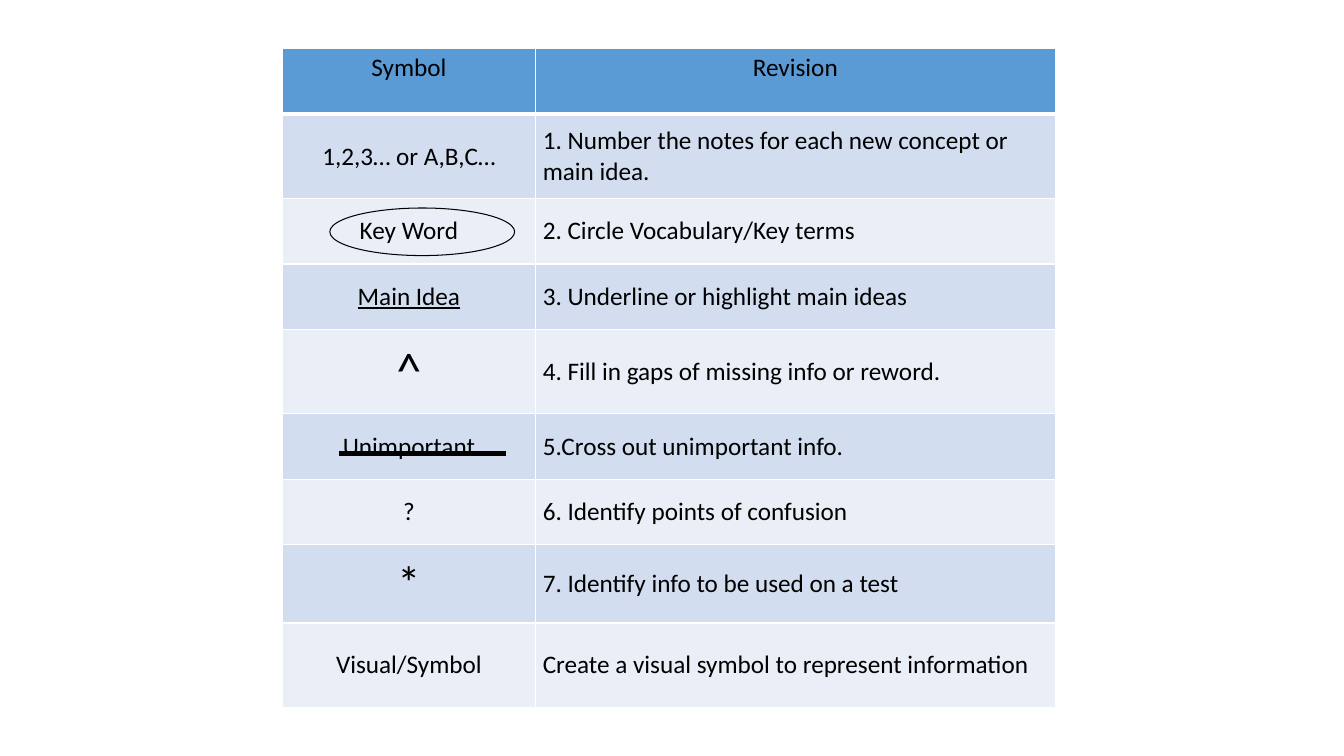
from lxml.etree import SubElement
from pptx import Presentation
from pptx.dml.color import RGBColor
from pptx.enum.shapes import MSO_CONNECTOR, MSO_SHAPE
from pptx.enum.text import MSO_ANCHOR, PP_ALIGN
from pptx.oxml.ns import qn
from pptx.util import Pt

# Content: symbol, revision, row height
HEADER = ("Symbol", "Revision", 46.8)
ROWS = [
    ("1,2,3… or A,B,C…", "1. Number the notes for each new concept or main idea.", 60.2),
    ("Key Word", "2. Circle Vocabulary/Key terms", 46.8),
    ("Main Idea", "3. Underline or highlight main ideas", 46.8),
    ("^", "4. Fill in gaps of missing info or reword.", 60.2),
    ("Unimportant", "5.Cross out unimportant info.", 46.8),
    ("?", "6. Identify points of confusion", 46.8),
    ("*", "7. Identify info to be used on a test", 55.8),
    ("Visual/Symbol", "Create a visual symbol to represent information", 60.2),
]
COLUMN_WIDTHS = (180.4, 371.6)
TABLE_LEFT, TABLE_TOP = 201.9, 34.8
UNDERLINED = {"Main Idea"}


class Theme:
    font = "Calibri"
    text_size = 18
    symbol_sizes = {"^": 36, "*": 33}
    ink = RGBColor(0, 0, 0)
    header_fill = RGBColor(0x5B, 0x9B, 0xD5)
    band_fills = (RGBColor(0xD2, 0xDE, 0xEF), RGBColor(0xEA, 0xEF, 0xF7))
    border = "FFFFFF"


def set_borders(cell, bottom_width):
    properties = cell._tc.get_or_add_tcPr()
    for side, width in (("L", 1), ("R", 1), ("T", 1), ("B", bottom_width)):
        line = SubElement(properties, qn(f"a:ln{side}"), w=str(Pt(width)))
        fill = SubElement(line, qn("a:solidFill"))
        SubElement(fill, qn("a:srgbClr"), val=Theme.border)


def write_cell(cell, text, fill, centred, header):
    set_borders(cell, 3 if header else 1)
    cell.fill.solid()
    cell.fill.fore_color.rgb = fill
    cell.margin_left = cell.margin_right = Pt(5.4)
    cell.margin_top = cell.margin_bottom = Pt(2.7)
    cell.vertical_anchor = MSO_ANCHOR.TOP if header else MSO_ANCHOR.MIDDLE
    para = cell.text_frame.paragraphs[0]
    para.alignment = PP_ALIGN.CENTER if centred else PP_ALIGN.LEFT
    span = para.add_run()
    span.text = text
    span.font.name = Theme.font
    span.font.size = Pt(Theme.symbol_sizes.get(text, Theme.text_size))
    span.font.color.rgb = Theme.ink
    if text in UNDERLINED:
        span.font.underline = True


deck = Presentation()
deck.slide_width, deck.slide_height = Pt(960), Pt(540)
page = deck.slides.add_slide(deck.slide_layouts[6])

# Revision table
all_rows = [HEADER] + ROWS
table = page.shapes.add_table(
    len(all_rows), len(COLUMN_WIDTHS), Pt(TABLE_LEFT), Pt(TABLE_TOP),
    Pt(sum(COLUMN_WIDTHS)), Pt(sum(row[2] for row in all_rows))).table
for column, width in zip(table.columns, COLUMN_WIDTHS):
    column.width = Pt(width)
for index, (symbol, revision, height) in enumerate(all_rows):
    header = index == 0
    fill = Theme.header_fill if header else Theme.band_fills[(index - 1) % 2]
    table.rows[index].height = Pt(height)
    write_cell(table.cell(index, 0), symbol, fill, True, header)
    write_cell(table.cell(index, 1), revision, fill, header, header)

# Circle around the key word
circle = page.shapes.add_shape(MSO_SHAPE.OVAL, Pt(235.6), Pt(148.6), Pt(132), Pt(34))
circle.shadow.inherit = False
circle.fill.background()
circle.line.color.rgb = Theme.ink
circle.line.width = Pt(0.75)

# Strike through the unimportant word
strike = page.shapes.add_connector(
    MSO_CONNECTOR.STRAIGHT, Pt(242), Pt(324), Pt(361.4), Pt(324))
strike.line.color.rgb = Theme.ink
strike.line.width = Pt(3.75)
SubElement(strike._element.spPr, qn("a:effectLst"))

deck.save("out.pptx")
